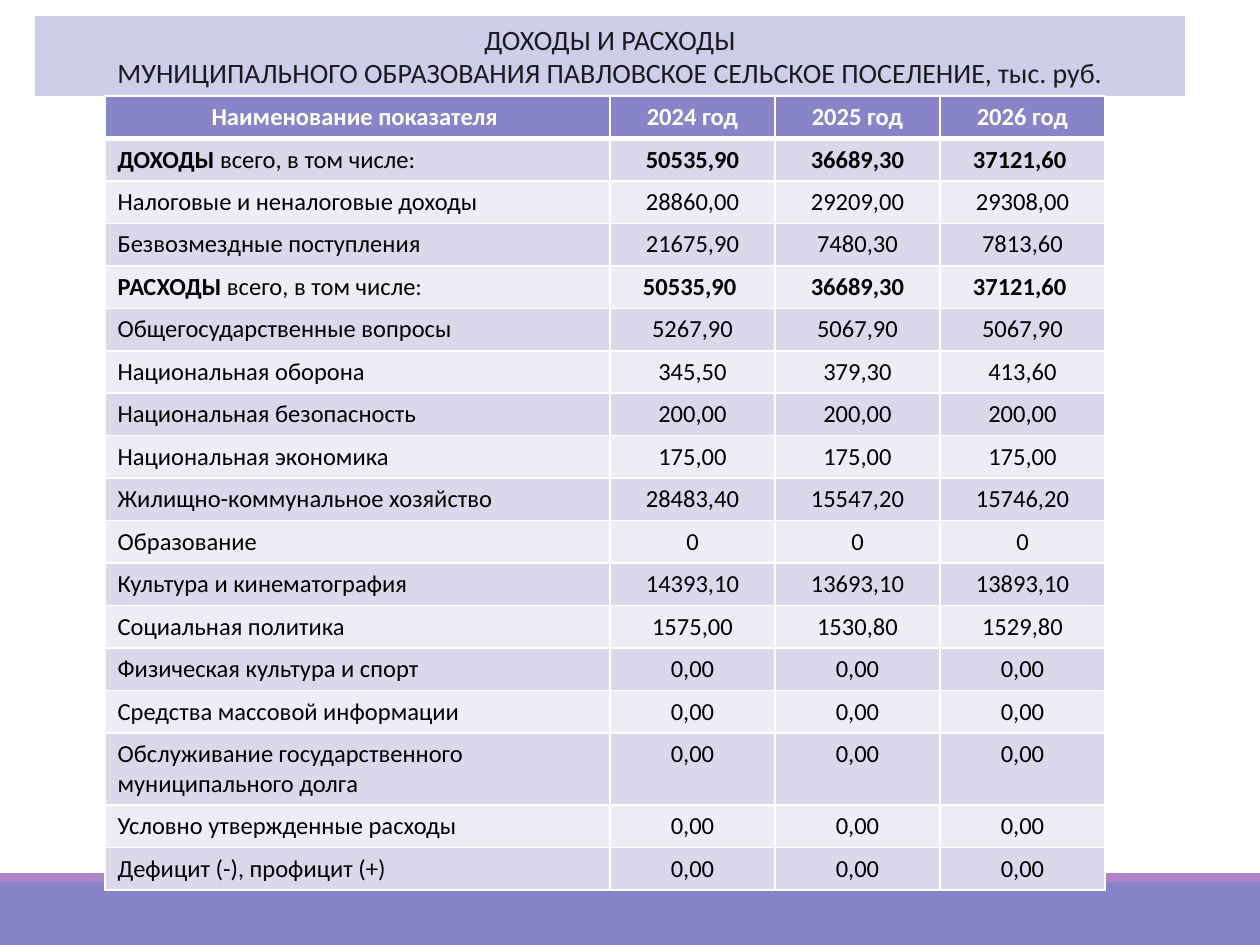
"""Build the slide with municipal revenues and expenditures for three years."""
from dataclasses import dataclass

import lxml.etree
import pptx
import pptx.dml.color
import pptx.enum.shapes
import pptx.enum.text
import pptx.oxml.ns
import pptx.util

EMU_PER_PX = 914400 / 126
FONT = "Calibri"
PURPLE, MAUVE, LAVENDER = "8784C7", "AD84C6", "CFCEE9"
WHITE, BLACK, INK = "FFFFFF", "000000", "1B1A22"
STRIPES = ("D9D9EB", "EDEDF5")
HEADINGS = ("Наименование показателя ", "2024 год", "2025 год", "2026 год")
HEADLINE = (
    "ДОХОДЫ И РАСХОДЫ\n"
    "МУНИЦИПАЛЬНОГО ОБРАЗОВАНИЯ ПАВЛОВСКОЕ СЕЛЬСКОЕ ПОСЕЛЕНИЕ, тыс. руб."
)
COLUMN_WIDTHS = (505, 165, 165, 165)
ROW_HEIGHT, TALL_ROW_HEIGHT = 42, 72
CENTER = pptx.enum.text.PP_ALIGN.CENTER
LEFT = pptx.enum.text.PP_ALIGN.LEFT


@dataclass(frozen=True)
class Band:
    top: int
    height: int
    color: str


@dataclass(frozen=True)
class Indicator:
    name: str
    amounts: tuple[str, str, str]
    total: str = ""
    height: int = ROW_HEIGHT


BANDS = (Band(882, 63, PURPLE), Band(873, 9, MAUVE))
ZERO = ("0,00",) * 3
INDICATORS = (
    Indicator("всего, в том числе:", ("50535,90", "36689,30", "37121,60 "), "ДОХОДЫ "),
    Indicator("Налоговые и неналоговые доходы", ("28860,00", "29209,00", "29308,00")),
    Indicator("Безвозмездные поступления", ("21675,90", "7480,30", "7813,60")),
    Indicator("всего, в том числе:", ("50535,90 ", "36689,30", "37121,60 "), "РАСХОДЫ "),
    Indicator("Общегосударственные вопросы", ("5267,90", "5067,90", "5067,90")),
    Indicator("Национальная оборона", ("345,50", "379,30", "413,60")),
    Indicator("Национальная безопасность", ("200,00",) * 3),
    Indicator("Национальная экономика", ("175,00",) * 3),
    Indicator("Жилищно-коммунальное хозяйство", ("28483,40", "15547,20", "15746,20")),
    Indicator("Образование", ("0",) * 3),
    Indicator("Культура и кинематография", ("14393,10", "13693,10", "13893,10")),
    Indicator("Социальная политика", ("1575,00", "1530,80", "1529,80")),
    Indicator("Физическая культура и спорт", ZERO),
    Indicator("Средства массовой информации", ZERO),
    Indicator("Обслуживание государственного муниципального долга", ZERO,
              height=TALL_ROW_HEIGHT),
    Indicator("Условно утвержденные расходы", ZERO),
    Indicator("Дефицит (-), профицит (+)", ZERO),
)


def px(length: int) -> pptx.util.Emu:
    return pptx.util.Emu(round(length * EMU_PER_PX))


def rgb(color: str) -> pptx.dml.color.RGBColor:
    return pptx.dml.color.RGBColor.from_string(color)


def paint(fill, color: str) -> None:
    fill.solid()
    fill.fore_color.rgb = rgb(color)


def format_paragraph(paragraph, size: int, color: str, align, bold: bool = False) -> None:
    paragraph.alignment = align
    font = paragraph.font
    font.name, font.size, font.bold = FONT, pptx.util.Pt(size), bold
    font.color.rgb = rgb(color)


def draw_band(slide, band: Band) -> None:
    stripe = slide.shapes.add_shape(
        pptx.enum.shapes.MSO_SHAPE.RECTANGLE,
        px(0), px(band.top), px(1260), px(band.height))
    stripe.shadow.inherit = False
    paint(stripe.fill, band.color)
    stripe.line.fill.background()


def draw_headline(slide) -> None:
    headline = slide.shapes.title
    headline.left, headline.top = px(35), px(16)
    headline.width, headline.height = px(1150), px(80)
    qn = pptx.oxml.ns.qn
    outline = lxml.etree.SubElement(
        headline.element.spPr, qn("a:prstGeom"), prst="roundRect")
    lxml.etree.SubElement(outline, qn("a:avLst"))
    paint(headline.fill, LAVENDER)
    frame = headline.text_frame
    frame.text = HEADLINE
    frame.word_wrap = True
    frame.auto_size = pptx.enum.text.MSO_AUTO_SIZE.NONE
    frame.vertical_anchor = pptx.enum.text.MSO_ANCHOR.MIDDLE
    for paragraph in frame.paragraphs:
        format_paragraph(paragraph, 16, INK, CENTER)


def draw_borders(cell, top: int, bottom: int) -> None:
    qn = pptx.oxml.ns.qn
    properties = cell._tc.get_or_add_tcPr()
    for side, points in (("L", 1), ("R", 1), ("T", top), ("B", bottom)):
        border = lxml.etree.SubElement(
            properties, qn(f"a:ln{side}"), w=str(pptx.util.Pt(points)))
        fill = lxml.etree.SubElement(border, qn("a:solidFill"))
        lxml.etree.SubElement(fill, qn("a:srgbClr"), val=WHITE)


def fill_cell(cell, text: str, fill: str, color: str, align,
              bold: bool = False, total: str = "", top: int = 1, bottom: int = 1) -> None:
    draw_borders(cell, top, bottom)
    paint(cell.fill, fill)
    paragraph = cell.text_frame.paragraphs[0]
    format_paragraph(paragraph, 14, color, align, bold)
    if total:
        lead = paragraph.add_run()
        lead.text, lead.font.bold = total, True
    paragraph.add_run().text = text
    for run in paragraph.runs:
        run.font.name, run.font.size = FONT, pptx.util.Pt(14)
        run.font.color.rgb = rgb(color)
        if run.font.bold is None:
            run.font.bold = bold


def draw_budget(slide) -> None:
    heights = (ROW_HEIGHT, *(indicator.height for indicator in INDICATORS))
    budget = slide.shapes.add_table(
        len(heights), len(COLUMN_WIDTHS), px(105), px(96),
        px(sum(COLUMN_WIDTHS)), px(sum(heights))).table
    for column, width in zip(budget.columns, COLUMN_WIDTHS):
        column.width = px(width)
    for row, height in zip(budget.rows, heights):
        row.height = px(height)
    for column, heading in enumerate(HEADINGS):
        fill_cell(budget.cell(0, column), heading, PURPLE, WHITE, CENTER,
                  bold=True, bottom=3)
    for row, indicator in enumerate(INDICATORS, start=1):
        stripe = STRIPES[(row - 1) % 2]
        top = 3 if row == 1 else 1
        fill_cell(budget.cell(row, 0), indicator.name, stripe, BLACK, LEFT,
                  total=indicator.total, top=top)
        for column, amount in enumerate(indicator.amounts, start=1):
            fill_cell(budget.cell(row, column), amount, stripe, BLACK, CENTER,
                      bold=bool(indicator.total), top=top)


def main() -> None:
    deck = pptx.Presentation()
    deck.slide_width, deck.slide_height = px(1260), px(945)
    slide = deck.slides.add_slide(deck.slide_layouts[5])
    paint(slide.background.fill, WHITE)
    for band in BANDS:
        draw_band(slide, band)
    draw_headline(slide)
    draw_budget(slide)
    deck.save("out.pptx")


if __name__ == "__main__":
    main()
